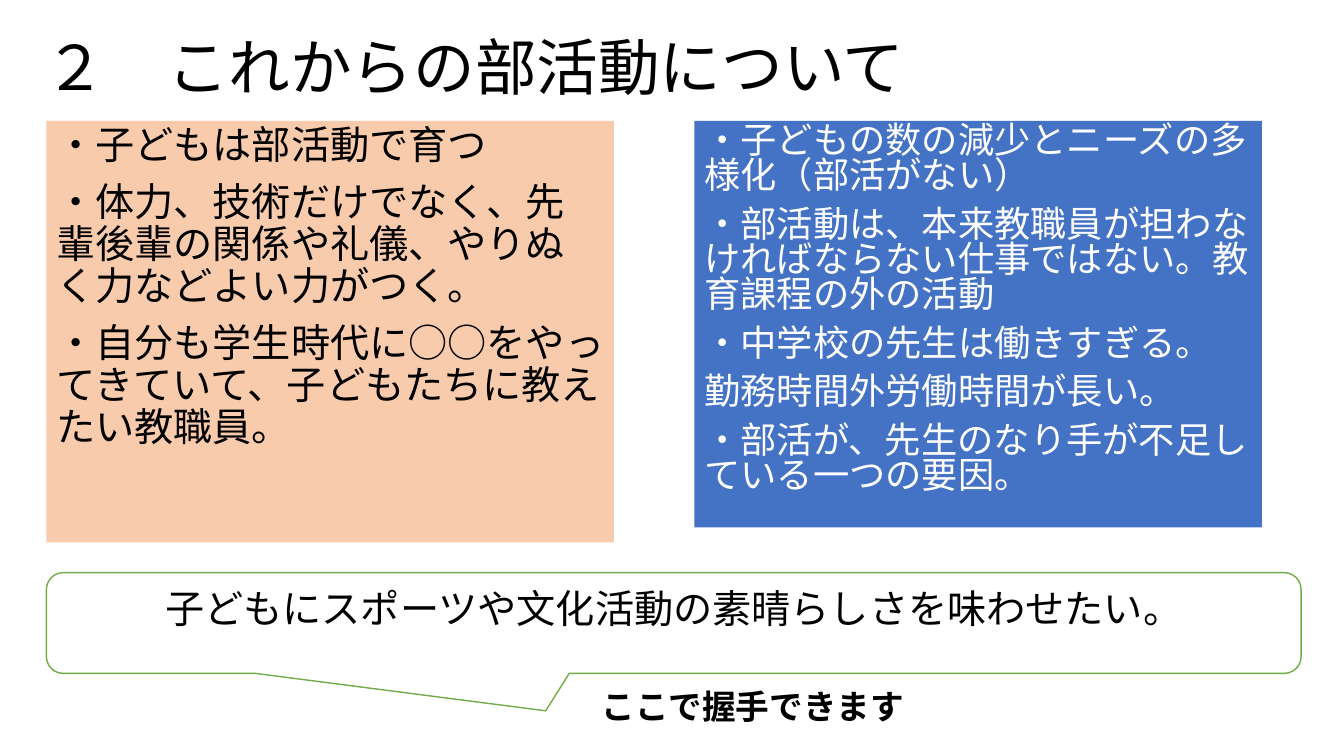
from dataclasses import dataclass
from typing import Any, Optional

from lxml import etree
from pptx import Presentation
from pptx import util as u
from pptx.dml.color import RGBColor
from pptx.enum import shapes, text
from pptx.oxml import ns

FONT = "Noto Sans CJK JP"
RECTANGLE = shapes.MSO_SHAPE.RECTANGLE
CALLOUT = shapes.MSO_SHAPE.ROUNDED_RECTANGULAR_CALLOUT


@dataclass
class Panel:
    box: tuple[float, float, float, float]
    paragraphs: list[str]
    size: float
    color: str = "000000"
    bold: bool = False
    fill: Optional[str] = None
    line: Optional[str] = None
    kind: Any = RECTANGLE
    adjustments: tuple[float, ...] = ()
    spacing: float = 1.0
    before: float = 0
    align: Any = text.PP_ALIGN.LEFT
    anchor: Any = text.MSO_ANCHOR.TOP
    bottom: float = 0.13


PANELS = [
    Panel((0.86, 0.51, 29.21, 2.54), ["２　これからの部活動について"], 44,
          spacing=0.9, anchor=text.MSO_ANCHOR.MIDDLE),
    Panel((1.17, 3.05, 14.3, 10.62), [
        "・子どもは部活動で育つ",
        "・体力、技術だけでなく、先輩後輩の関係や礼儀、やりぬく力などよい力がつく。",
        "・自分も学生時代に○○をやってきていて、子どもたちに教えたい教職員。",
    ], 28, fill="F8CBAD", spacing=0.9, before=10),
    Panel((17.5, 3.05, 14.3, 10.24), [
        "・子どもの数の減少とニーズの多様化（部活がない）",
        "・部活動は、本来教職員が担わなければならない仕事ではない。教育課程の外の活動",
        "・中学校の先生は働きすぎる。",
        "勤務時間外労働時間が長い。",
        "・部活が、先生のなり手が不足している一つの要因。",
    ], 25.9, color="FFFFFF", fill="4472C4", spacing=0.8, before=10),
    Panel((1.17, 14.43, 31.62, 2.54),
          ["子どもにスポーツや文化活動の素晴らしさを味わせたい。"], 28,
          fill="FFFFFF", line="70AD47", kind=CALLOUT,
          adjustments=(-0.102, 0.871, 0.167), align=text.PP_ALIGN.CENTER,
          anchor=text.MSO_ANCHOR.MIDDLE, bottom=0.9),
    Panel((14.91, 17.17, 11.07, 1.27), ["ここで握手できます"], 24, bold=True),
]


def rgb(value: str) -> RGBColor:
    return RGBColor.from_string(value)


def apply(target: Any, values: dict[str, Any]) -> None:
    for name, value in values.items():
        setattr(target, name, value)


def write_paragraph(paragraph: Any, content: str, panel: Panel) -> None:
    apply(paragraph, {"alignment": panel.align, "line_spacing": panel.spacing,
                      "space_before": u.Pt(panel.before)})
    run = paragraph.add_run()
    run.text = content
    apply(run.font, {"name": FONT, "size": u.Pt(panel.size), "bold": panel.bold})
    run.font.color.rgb = rgb(panel.color)
    east_asian = etree.SubElement(run.font._element, ns.qn("a:ea"))
    east_asian.set("typeface", FONT)


def draw_panel(slide: Any, panel: Panel) -> None:
    box = [u.Cm(length) for length in panel.box]
    if panel.fill:
        shape = slide.shapes.add_shape(panel.kind, *box)
        shape.shadow.inherit = False
        shape.fill.solid()
        shape.fill.fore_color.rgb = rgb(panel.fill)
        for index, value in enumerate(panel.adjustments):
            shape.adjustments[index] = value
        if panel.line:
            shape.line.color.rgb = rgb(panel.line)
            shape.line.width = u.Pt(1)
        else:
            shape.line.fill.background()
    else:
        shape = slide.shapes.add_textbox(*box)
    frame = shape.text_frame
    apply(frame, {"word_wrap": True, "vertical_anchor": panel.anchor,
                  "margin_bottom": u.Cm(panel.bottom)})
    for index, content in enumerate(panel.paragraphs):
        paragraph = frame.add_paragraph() if index else frame.paragraphs[0]
        write_paragraph(paragraph, content, panel)


def main() -> None:
    presentation = Presentation()
    apply(presentation, {"slide_width": u.Cm(33.87), "slide_height": u.Cm(19.05)})
    slide = presentation.slides.add_slide(presentation.slide_layouts[6])
    for panel in PANELS:
        draw_panel(slide, panel)
    presentation.save("out.pptx")


if __name__ == "__main__":
    main()
